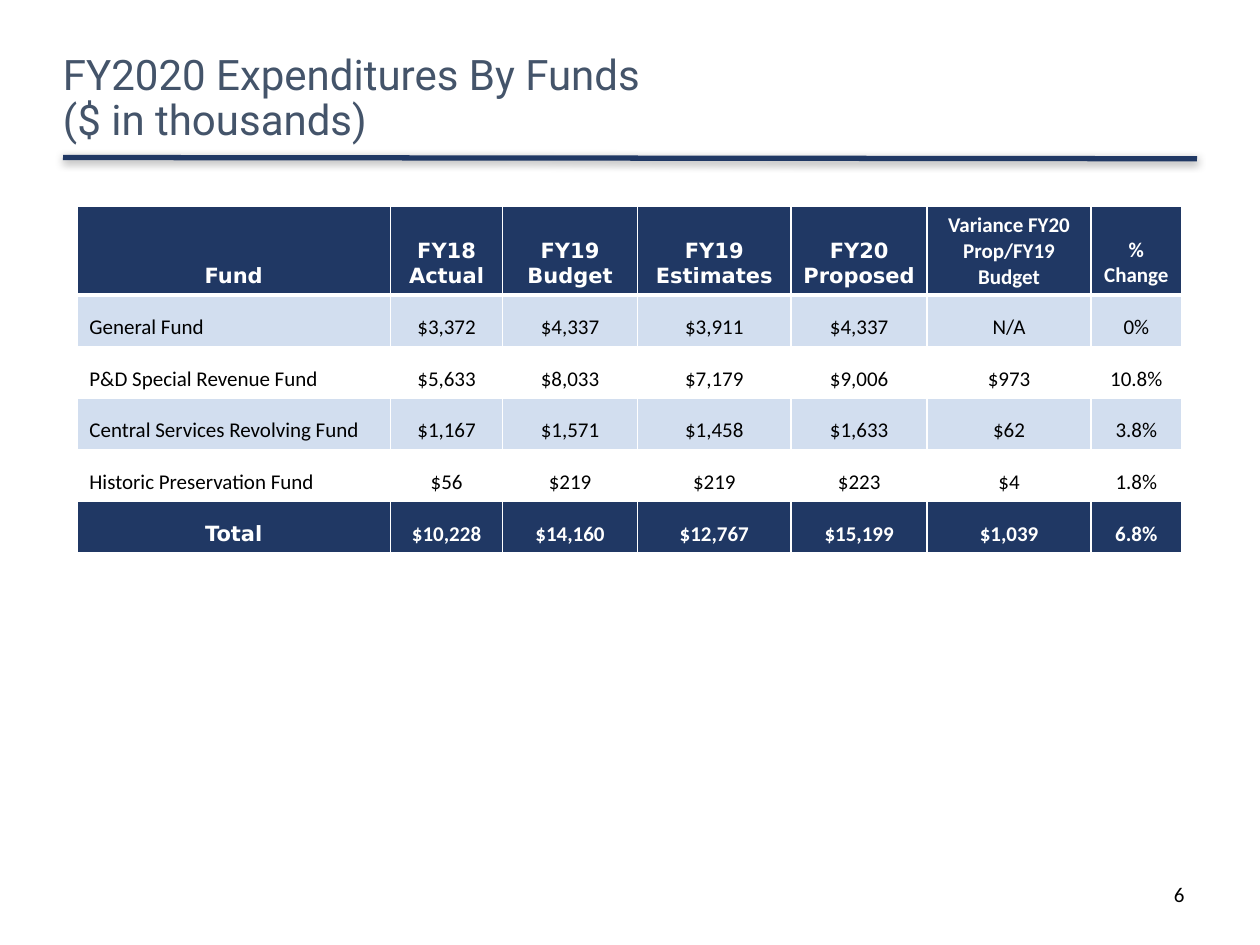
from lxml import etree
from pptx import Presentation
from pptx import util as u
from pptx.dml.color import RGBColor
from pptx.enum import shapes, text
from pptx.oxml import parse_xml
from pptx.oxml.ns import nsdecls, qn

NAVY, PALE, WHITE, BLACK, SLATE = "203864", "D2DEEF", "FFFFFF", "000000", "44546A"
COLUMN_WIDTHS = [9.96, 3.56, 4.28, 4.88, 4.32, 5.2, 2.88]
ROW_HEIGHTS = [2.76] + [1.64] * 5
FUNDS = [
    ["Fund", "FY18\nActual", "FY19\nBudget", "FY19\nEstimates", "FY20\nProposed",
     "Variance FY20 Prop/FY19 Budget", "%\nChange"],
    ["General Fund", "$3,372", "$4,337", "$3,911", "$4,337", "N/A", "0%"],
    ["P&D Special Revenue Fund", "$5,633", "$8,033", "$7,179", "$9,006", "$973", "10.8%"],
    ["Central Services Revolving Fund", "$1,167", "$1,571", "$1,458", "$1,633", "$62", "3.8%"],
    ["Historic Preservation Fund", "$56", "$219", "$219", "$223", "$4", "1.8%"],
    ["Total", "$10,228", "$14,160", "$12,767", "$15,199", "$1,039", "6.8%"],
]


def color(value):
    return RGBColor.from_string(value)


class SlideBuilder:
    def __init__(self, presentation):
        self.slide = presentation.slides.add_slide(presentation.slide_layouts[6])
        self.column = presentation.slide_width / 40
        self.row = presentation.slide_height / 30

    def place(self, x, y):
        return round(x * self.column), round(y * self.row)

    def style(self, paragraph, size, font, ink, bold=False, align=text.PP_ALIGN.LEFT):
        paragraph.alignment = align
        paragraph.font.size = u.Pt(size)
        paragraph.font.name = font
        paragraph.font.bold = bold
        paragraph.font.color.rgb = color(ink)

    def textbox(self, x, y, width, height, content, size, font, ink,
                align=text.PP_ALIGN.LEFT, anchor=text.MSO_ANCHOR.TOP, inset=0.1, spacing=1.0):
        shape = self.slide.shapes.add_textbox(*self.place(x, y), *self.place(width, height))
        frame = shape.text_frame
        frame.word_wrap = True
        frame.vertical_anchor = anchor
        frame.margin_left = frame.margin_right = u.Inches(inset)
        frame.margin_top = frame.margin_bottom = u.Inches(inset / 2)
        paragraph = frame.paragraphs[0]
        paragraph.text = content
        paragraph.line_spacing = spacing
        self.style(paragraph, size, font, ink, align=align)

    def rule(self, x1, y1, x2, y2, ink, width):
        line = self.slide.shapes.add_connector(
            shapes.MSO_CONNECTOR.STRAIGHT, *self.place(x1, y1), *self.place(x2, y2))
        line.line.color.rgb = color(ink)
        line.line.width = u.Pt(width)
        line._element.spPr.append(parse_xml(
            f'<a:effectLst {nsdecls("a")}><a:outerShdw blurRad="{u.Pt(5)}" dist="{u.Pt(1.6)}" '
            f'dir="5400000" rotWithShape="0"><a:srgbClr val="{BLACK}"><a:alpha val="38000"/>'
            '</a:srgbClr></a:outerShdw></a:effectLst>'))

    def borders(self, cell, widths):
        properties = cell._tc.get_or_add_tcPr()
        for side, width in widths.items():
            line = etree.SubElement(properties, qn(f"a:ln{side}"), w=str(u.Pt(width)))
            fill = etree.SubElement(line, qn("a:solidFill"))
            etree.SubElement(fill, qn("a:srgbClr"), val=WHITE)

    def table(self, x, y, widths, heights, rows):
        table = self.slide.shapes.add_table(
            len(rows), len(widths), *self.place(x, y),
            *self.place(sum(widths), sum(heights))).table
        for column, width in zip(table.columns, widths):
            column.width = round(width * self.column)
        for row, height in zip(table.rows, heights):
            row.height = round(height * self.row)
        last = len(rows) - 1
        for r, values in enumerate(rows):
            for c, value in enumerate(values):
                self.cell(table.cell(r, c), value, r, c, last)

    def cell(self, cell, value, r, c, last):
        strong = r in (0, last)
        display = (r == 0 and c < 5) or (r == last and c == 0)
        centred = strong or c > 0
        self.borders(cell, {"L": 1, "R": 1, "T": 3 if r == 1 else 1, "B": 3 if r == 0 else 1})
        cell.fill.solid()
        cell.fill.fore_color.rgb = color(NAVY if strong else PALE if r % 2 else WHITE)
        cell.vertical_anchor = text.MSO_ANCHOR.BOTTOM
        if c:
            cell.margin_left = cell.margin_right = u.Inches(0.08)
        cell.text = value
        for paragraph in cell.text_frame.paragraphs:
            self.style(paragraph, 12, "DejaVu Sans" if display else "Calibri",
                       WHITE if strong else BLACK, strong,
                       text.PP_ALIGN.CENTER if centred else text.PP_ALIGN.LEFT)


def main():
    presentation = Presentation()
    presentation.slide_width, presentation.slide_height = u.Inches(10), u.Inches(7.5)
    builder = SlideBuilder(presentation)
    builder.rule(2, 5, 38, 5.04, NAVY, 3)
    builder.textbox(2, 1.32, 27.44, 3.68, "FY2020 Expenditures By Funds\v($ in thousands)",
                    24, "Roboto", SLATE, anchor=text.MSO_ANCHOR.MIDDLE, inset=0, spacing=0.9)
    builder.textbox(28.68, 27.8, 9.32, 1.6, "6", 12, "Calibri", BLACK,
                    align=text.PP_ALIGN.RIGHT)
    builder.table(2.44, 6.56, COLUMN_WIDTHS, ROW_HEIGHTS, FUNDS)
    presentation.save("out.pptx")


if __name__ == "__main__":
    main()
